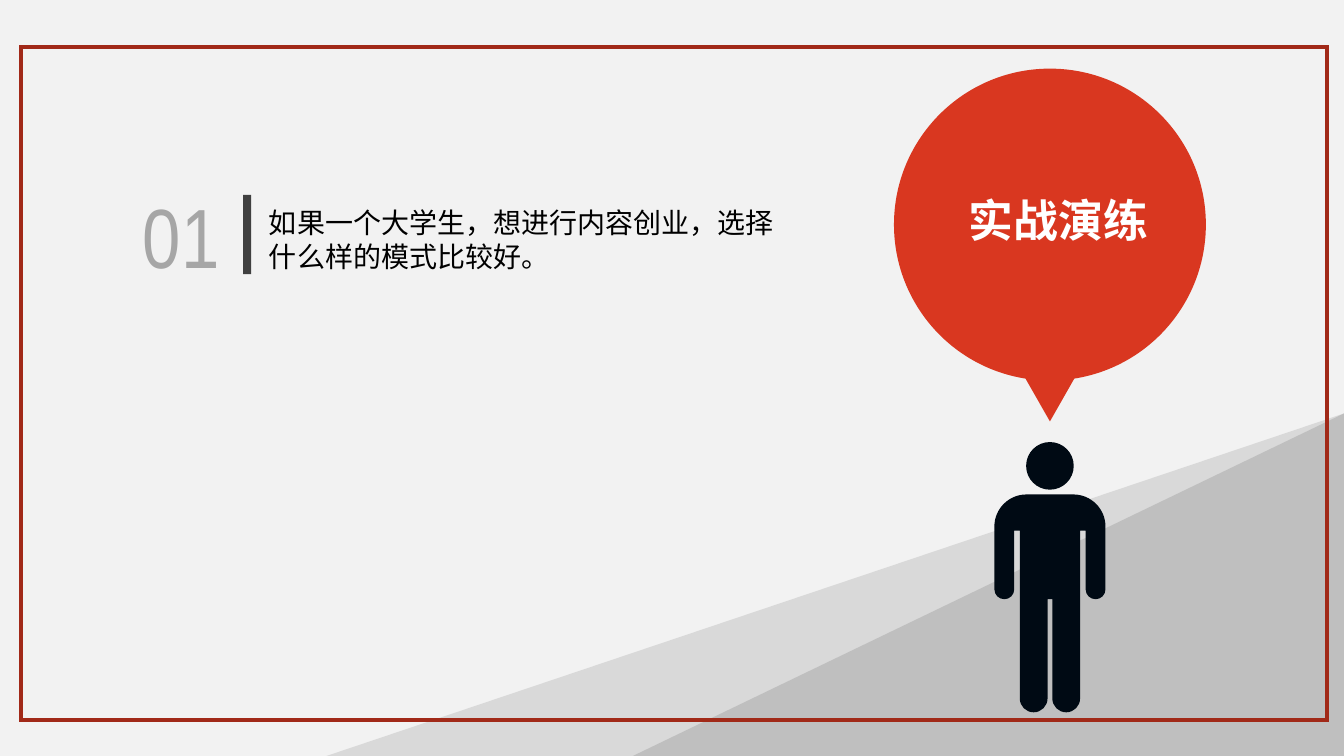
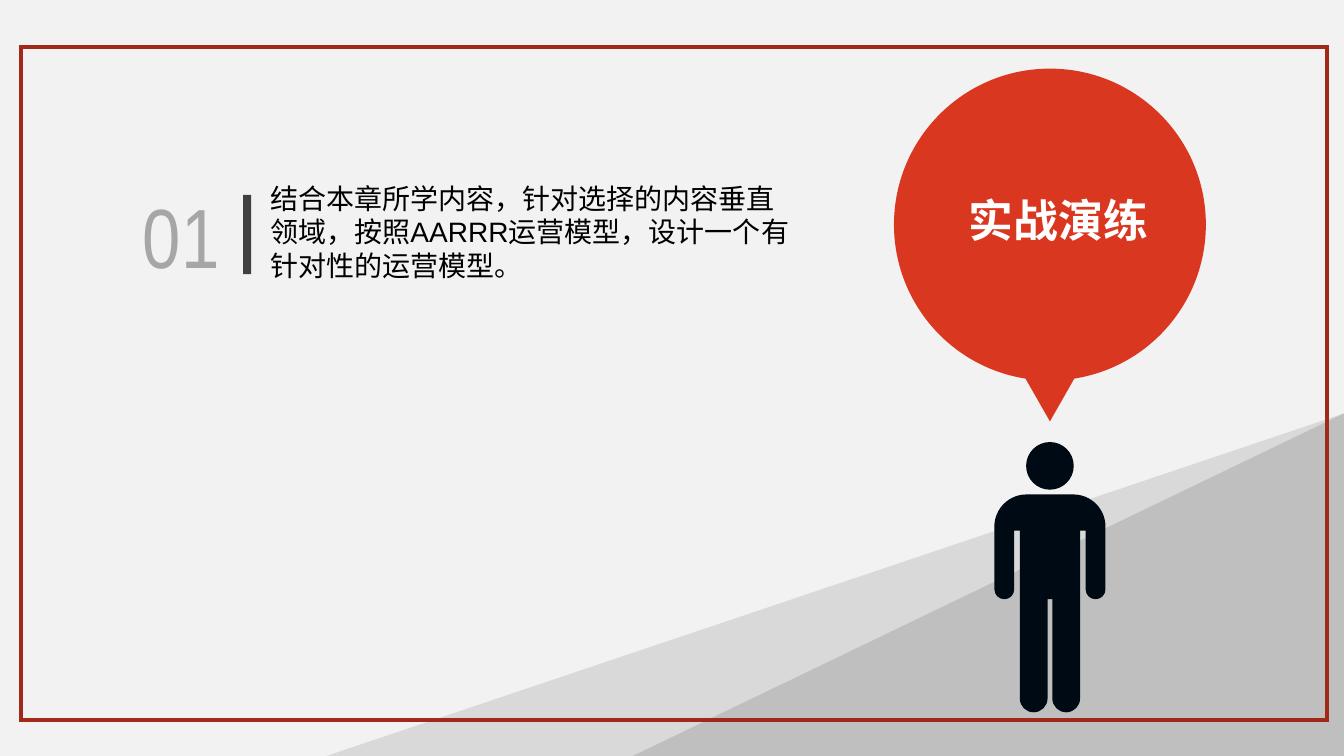
import math

from lxml import etree
from pptx import Presentation
from pptx import util as u
from pptx.dml.color import RGBColor
from pptx.enum import lang, shapes, text
from pptx.oxml.ns import qn

BACKGROUND = RGBColor(0xF2, 0xF2, 0xF2)
HILL_LIGHT = RGBColor(0xD9, 0xD9, 0xD9)
HILL_DARK = RGBColor(0xBF, 0xBF, 0xBF)
FIGURE = RGBColor(0x00, 0x0A, 0x14)
RED = RGBColor(0xD9, 0x37, 0x20)
DARK_RED = RGBColor(0xA1, 0x29, 0x18)
BAR = RGBColor(0x40, 0x40, 0x40)
NUMBER = RGBColor(0xA6, 0xA6, 0xA6)
BLACK = RGBColor(0, 0, 0)
WHITE = RGBColor(0xFF, 0xFF, 0xFF)

SLIDE_WIDTH, SLIDE_HEIGHT = 33.87, 19.05  # all lengths in centimetres
TITLE = "实战演练"
# Question text with the box it fills, relative to the item
QUESTIONS = [
    ("如果一个大学生，想进行内容创业，选择什么样的模式比较好。", (3.18, 0.53, 13.08, 1.96)),
    ("结合本章所学内容，针对选择的内容垂直领域，按照AARRR运营模型，设计一个有针对性的运营模型。",
     (3.21, -0.08, 13.08, 2.82)),
]


def place(shape, left, top, width, height):
    shape.left, shape.top = u.Cm(left), u.Cm(top)
    shape.width, shape.height = u.Cm(width), u.Cm(height)


def paint(shape, fill):
    shape.shadow.inherit = False
    shape.fill.solid()
    shape.fill.fore_color.rgb = fill
    shape.line.fill.background()
    return shape


def add_shape(slide, kind, box, fill):
    shape = slide.shapes.add_shape(kind, *(u.Cm(length) for length in box))
    return paint(shape, fill)


def arc(center_x, center_y, radius, *angles):
    """Start point, then one curve (two handles and an end) between angles."""
    def point(angle, handle=0):
        cosine, sine = math.cos(math.radians(angle)), math.sin(math.radians(angle))
        return (center_x + radius * (cosine - handle * sine),
                center_y + radius * (sine + handle * cosine))

    segments = [[point(angles[0])]]
    for start, stop in zip(angles, angles[1:]):
        handle = 4 / 3 * math.tan(math.radians(stop - start) / 4)
        segments.append([point(start, handle), point(stop, -handle), point(stop)])
    return segments


def mirror(segments):
    """The same outline reflected in the line x = 0, run backwards."""
    reflected, pending = [], 1
    for segment in reversed(segments):
        points = [(-x, y) for x, y in reversed(segment)]
        if pending == 3:
            reflected[-1].append(points[0])
        else:
            reflected.append([points[0]])
        if len(points) == 3:
            reflected.append(points[1:])
        pending = len(points)
    return reflected


def add_outline(slide, contours, left, top, fill):
    """Draw closed contours of lines (one point) and curves (three points)."""
    builder = None
    for contour in contours:
        points = [(u.Cm(left + x), u.Cm(top + y)) for segment in contour for x, y in segment]
        if builder is None:
            builder = slide.shapes.build_freeform(*points[0])
        else:
            builder.move_to(*points[0])
        builder.add_line_segments(points[1:], close=True)
    shape = builder.convert_to_shape()
    lines = shape._element.iter(qn("a:lnTo"))
    lines = iter(list(lines))
    for contour in contours:
        for segment in contour[1:]:
            steps = [next(lines) for _ in segment]
            if len(steps) == 3:
                curve = etree.Element(qn("a:cubicBezTo"))
                steps[0].addprevious(curve)
                for step in steps:
                    curve.append(step[0])
                    step.getparent().remove(step)
    return paint(shape, fill)


def write(shape, content, size, color, font="Arial", bold=False, wrap=True):
    frame = shape.text_frame
    frame.text = content
    frame.word_wrap = wrap
    frame.auto_size = text.MSO_AUTO_SIZE.SHAPE_TO_FIT_TEXT
    frame.vertical_anchor = text.MSO_ANCHOR.TOP
    frame.margin_left = frame.margin_right = 0
    frame.margin_top = frame.margin_bottom = u.Cm(0.13)
    paragraph = frame.paragraphs[0]
    paragraph.alignment = text.PP_ALIGN.LEFT
    for run in paragraph.runs:
        run.font.name, run.font.size, run.font.bold = font, u.Pt(size), bold
        run.font.color.rgb = color
        run.font.language_id = lang.MSO_LANGUAGE_ID.SIMPLIFIED_CHINESE
        east_asian = etree.SubElement(run.font._element, qn("a:ea"))
        east_asian.set("typeface", font)


def add_text(slide, box, content, size, color, **style):
    textbox = slide.shapes.add_textbox(*(u.Cm(length) for length in box))
    write(textbox, content, size, color, **style)


def add_hills(slide, top):
    """Two slopes rising to the right edge of the slide."""
    for left, color in ((8.23, HILL_LIGHT), (15.95, HILL_DARK)):
        box = (left, top, SLIDE_WIDTH - left, SLIDE_HEIGHT - top)
        hill = add_shape(slide, shapes.MSO_SHAPE.RIGHT_TRIANGLE, box, color)
        hill._element.spPr.xfrm.set("flipH", "1")


def add_person(slide, center, top):
    """A standing figure, symmetrical about its centre line."""
    right_half = [
        *arc(0.59, 2.13, 0.81, -90, 0),         # shoulder
        *arc(1.15, 3.71, 0.25, 0, 90, 180),     # hand
        [(0.9, 2.23)], [(0.76, 2.23)],          # armpit
        *arc(0.41, 6.46, 0.35, 0, 90, 180),     # foot
        [(0.06, 3.96)],                         # inner leg
    ]
    head = arc(0, 0.6, 0.6, -90, 0, 90, 180, 270)
    add_outline(slide, [right_half + mirror(right_half), head], center, top, FIGURE)


def add_title_bubble(slide, center, top):
    """Round speech bubble with the slide title inside."""
    radius, tail_angle = 3.93, 9
    circle = arc(0, radius, radius, 90 + tail_angle, 180, 270, 360, 450 - tail_angle)
    add_outline(slide, [circle + [[(0, 8.89)]]], center, top, RED)
    title = slide.shapes.title
    place(title, center - 2.05, top + 2.99, 4.57, 1.63)
    write(title, TITLE, 32, WHITE, bold=True, wrap=False)
    slide.shapes._spTree.append(title._element)  # bring in front of the bubble


def add_question(slide, left, top, number, question, question_box):
    """Large number, upright bar and question text."""
    add_shape(slide, shapes.MSO_SHAPE.RECTANGLE, (left + 2.53, top + 0.39, 0.2, 2), BAR)
    x, y, width, height = question_box
    add_text(slide, (left + x, top + y, width, height), question, 20, BLACK)
    add_text(slide, (left, top, 1.96, 2.82), number, 60, NUMBER,
             font="Arial Narrow", wrap=False)


def add_frame(slide):
    """Unfilled border with square corners."""
    frame = add_shape(slide, shapes.MSO_SHAPE.RECTANGLE, (0.53, 1.19, 32.92, 16.95), WHITE)
    frame.fill.background()
    frame.line.color.rgb = DARK_RED
    frame.line.width = u.Pt(3)
    corner = etree.SubElement(frame._element.spPr.find(qn("a:ln")), qn("a:miter"))
    corner.set("lim", "800000")


def add_exercise_slide(presentation, question, question_box):
    slide = presentation.slides.add_slide(presentation.slide_layouts[5])
    add_hills(slide, 10.42)
    add_person(slide, 26.46, 11.14)
    add_title_bubble(slide, 26.46, 1.73)
    add_question(slide, 3.6, 4.52, "01", question, question_box)
    add_frame(slide)


def main():
    presentation = Presentation()
    presentation.slide_width = u.Cm(SLIDE_WIDTH)
    presentation.slide_height = u.Cm(SLIDE_HEIGHT)
    background = presentation.slide_master.background.fill
    background.solid()
    background.fore_color.rgb = BACKGROUND
    for question, question_box in QUESTIONS:
        add_exercise_slide(presentation, question, question_box)
    presentation.save("out.pptx")


if __name__ == "__main__":
    main()
